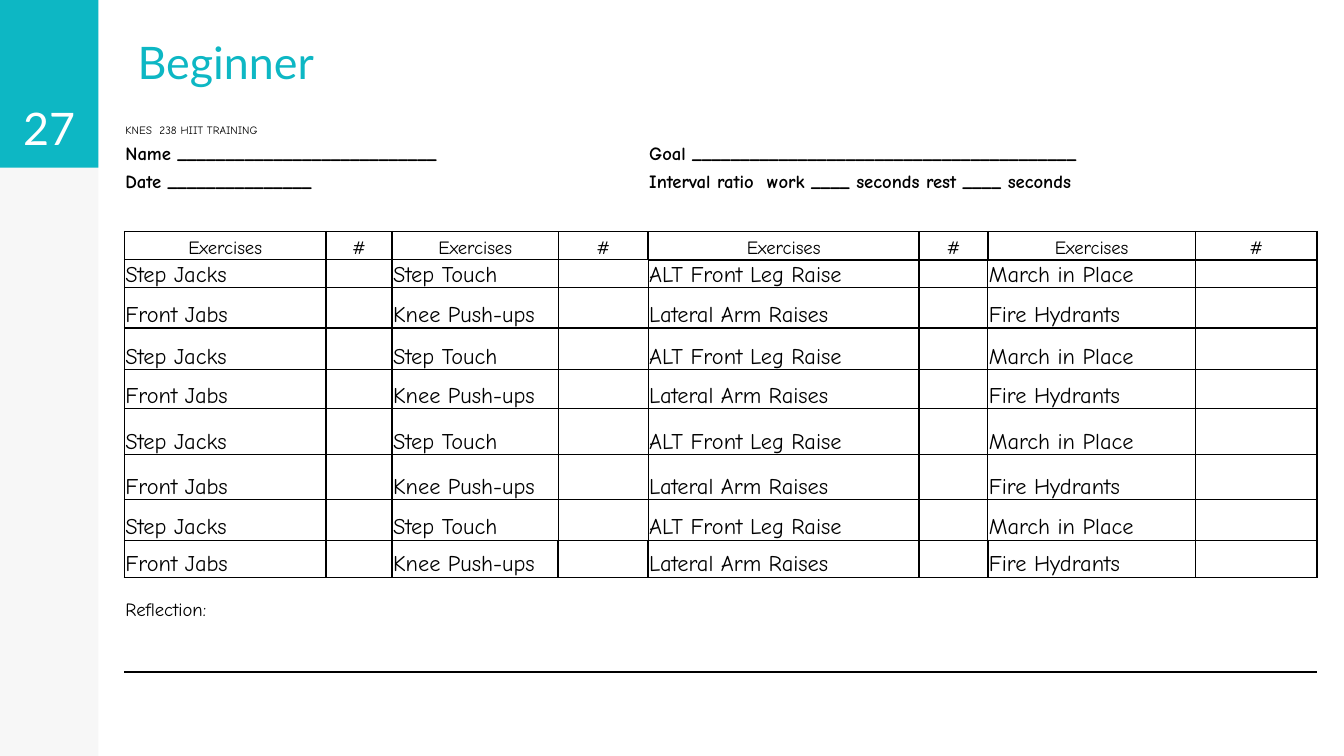
from lxml import etree
from pptx import Presentation
from pptx.dml.color import RGBColor
from pptx.enum import shapes, text
from pptx.oxml.ns import qn
from pptx.util import Cm, Pt

TEAL, BLACK, WHITE = "0DB7C4", "000000", "FFFFFF"
HEADING_FONT, TABLE_FONT = "Lato", "Comic Neue"
PLAIN_STYLE = "{2D5ABB26-0587-4C30-8999-92F81FD0307C}"

COLUMNS = [3.81, 1.25, 3.14, 1.7, 4.29, 0.83, 1.3, 3.92, 2.3]
ROWS = [0.69, 0.53, 0.53, 0.73, 0.53, 0.51, 0.76, 0.79,
        0.74, 0.87, 0.85, 0.77, 0.7, 1.78, 0.66]
HEADER, FIRST, LAST, REFLECTION = 4, 5, 12, 13

# Columns where the cells of the exercise grid start
GRID_COLUMNS = [0, 1, 2, 3, 4, 6, 7, 8]
EXERCISE_COLUMNS = GRID_COLUMNS[::2]
EXERCISES = [
    ["Step Jacks", "Step Touch", "ALT Front Leg Raise", "March in Place"],
    ["Front Jabs", "Knee Push-ups", "Lateral Arm Raises", "Fire Hydrants"],
]
FORM_LINES = [
    (1, 0, "Name ___________________________"),
    (1, 4, "Goal ________________________________________"),
    (2, 0, "Date _______________"),
    (2, 4, "Interval ratio  work ____ seconds rest ____ seconds"),
]


def color(value):
    return RGBColor.from_string(value)


def add_span(para, words, size, font, ink, bold=False):
    span = para.add_run()
    span.text = words
    span.font.size = Pt(size)
    span.font.name = font
    span.font.bold = bold
    span.font.color.rgb = color(ink)


def add_band(page, height, fill, alpha=None):
    band = page.shapes.add_shape(
        shapes.MSO_SHAPE.RECTANGLE, 0, 0, Cm(1.86), height)
    band.shadow.inherit = False
    band.line.fill.background()
    band.fill.solid()
    band.fill.fore_color.rgb = color(fill)
    if alpha is not None:
        tint = band.fill._xPr.find(".//" + qn("a:srgbClr"))
        etree.SubElement(tint, qn("a:alpha"), val=str(alpha * 1000))


def add_heading(page, words, left, width, height, ink, align):
    box = page.shapes.add_textbox(left, 0, width, height)
    frame = box.text_frame
    frame.word_wrap = True
    frame.vertical_anchor = text.MSO_ANCHOR.BOTTOM
    frame.margin_left = frame.margin_right = Cm(0.25)
    frame.margin_top = frame.margin_bottom = Cm(0.25)
    frame.paragraphs[0].alignment = align
    add_span(frame.paragraphs[0], words, 24, HEADING_FONT, ink)


def write_cell(cell, words, size, bold=False, align=text.PP_ALIGN.LEFT):
    para = cell.text_frame.paragraphs[0]
    para.alignment = align
    add_span(para, words, size, TABLE_FONT, BLACK, bold)


def set_borders(cell, **widths):
    properties = cell._tc.get_or_add_tcPr()
    for side in "LRTB":
        if side in widths:
            line = etree.SubElement(properties, qn("a:ln" + side),
                                    w=str(Pt(widths[side])))
            fill = etree.SubElement(line, qn("a:solidFill"))
            etree.SubElement(fill, qn("a:srgbClr"), val=BLACK)


def grid_borders(row, column):
    if row == LAST or (row == HEADER and column >= 4):
        return dict.fromkeys("LRTB", 1)
    widths = dict.fromkeys("LRTB", 0.75)
    if (row == HEADER and column != 3) or (row == FIRST and column >= 4):
        widths["T"] = 1
    if row == HEADER and column == 3:
        widths["R"] = 1
    if row == LAST - 1:
        widths["B"] = 1
    return widths


def merge_cells(table):
    merges = [(0, 0, 2), (0, 5, 6)]
    merges += [(row, 0, 2) for row in (1, 2, 3)]
    merges += [(row, 4, 8) for row in (1, 2, 3)]
    merges += [(row, 4, 5) for row in range(HEADER, LAST + 1)]
    merges += [(row, 0, 8) for row in (REFLECTION, REFLECTION + 1)]
    for row, start, end in merges:
        table.cell(row, start).merge(table.cell(row, end))


def fill_table(table):
    # Form lines above the grid
    write_cell(table.cell(0, 0), "KNES  238 HIIT TRAINING", 6)
    for row, column, words in FORM_LINES:
        write_cell(table.cell(row, column), words, 10, bold=True)

    # Exercise grid
    for column in GRID_COLUMNS:
        label = "Exercises" if column in EXERCISE_COLUMNS else "#"
        write_cell(table.cell(HEADER, column), label, 10,
                   align=text.PP_ALIGN.CENTER)
    for row in range(FIRST, LAST + 1):
        names = EXERCISES[(row - FIRST) % 2]
        for column, name in zip(EXERCISE_COLUMNS, names):
            write_cell(table.cell(row, column), name, 12)

    # Reflection area
    reflection = table.cell(REFLECTION, 0)
    reflection.vertical_anchor = text.MSO_ANCHOR.TOP
    reflection.margin_top = Cm(0.42)
    write_cell(reflection, "Reflection:", 10)


def add_workout_table(page):
    frame = page.shapes.add_table(len(ROWS), len(COLUMNS), Cm(2.35), Cm(1.9),
                                  Cm(sum(COLUMNS)), Cm(sum(ROWS)))
    table = frame.table
    table.first_row = table.horz_banding = False
    table._tbl.tblPr.find(qn("a:tableStyleId")).text = PLAIN_STYLE
    for column, width in zip(table.columns, COLUMNS):
        column.width = Cm(width)
    for row, height in zip(table.rows, ROWS):
        row.height = Cm(height)
    merge_cells(table)

    for cell in table.iter_cells():
        cell.margin_left = cell.margin_right = cell.margin_top = Cm(0.02)
        cell.margin_bottom = 0
        cell.vertical_anchor = text.MSO_ANCHOR.BOTTOM
    fill_table(table)

    for row in range(HEADER, LAST + 1):
        for column in GRID_COLUMNS:
            set_borders(table.cell(row, column), **grid_borders(row, column))
    set_borders(table.cell(HEADER - 1, 0), B=1)
    set_borders(table.cell(HEADER - 1, 3), B=0.75)
    set_borders(table.cell(HEADER - 1, 4), B=1)
    set_borders(table.cell(REFLECTION, 0), T=1)

    # Small type in empty cells keeps the rows at their set height
    for cell in table.iter_cells():
        cell.fill.background()
        para = cell.text_frame.paragraphs[0]
        if not para.runs:
            etree.SubElement(para._p, qn("a:endParaRPr"), sz="600")


def main():
    deck = Presentation()
    deck.slide_width, deck.slide_height = Cm(25.4), Cm(14.29)
    page = deck.slides.add_slide(deck.slide_layouts[6])

    # Side band and page number
    add_band(page, deck.slide_height, BLACK, alpha=3)
    add_band(page, Cm(3.17), TEAL)
    add_heading(page, "Beginner", Cm(2.35), Cm(9.88), Cm(1.93), TEAL,
                text.PP_ALIGN.LEFT)
    add_heading(page, "27", 0, Cm(1.86), Cm(3.17), WHITE,
                text.PP_ALIGN.CENTER)

    # Workout sheet
    add_workout_table(page)
    deck.save("out.pptx")


if __name__ == "__main__":
    main()
